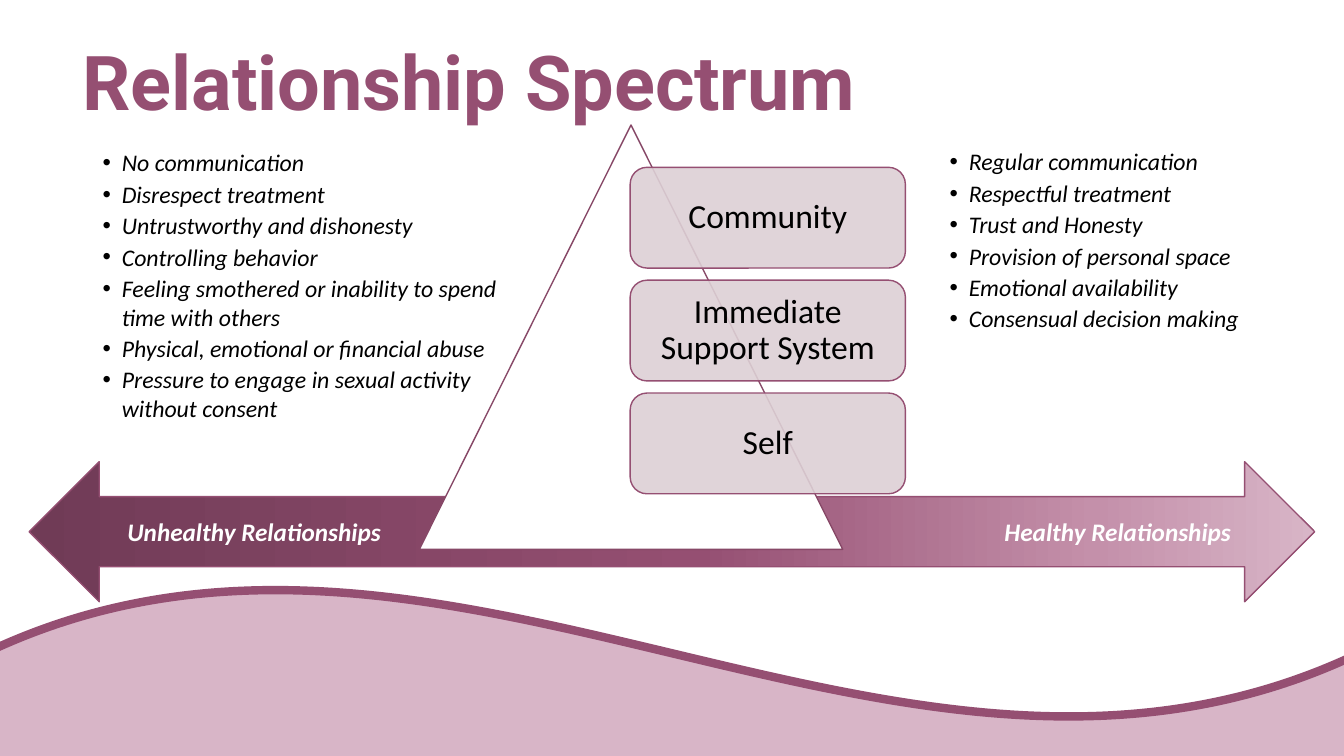
import pptx
import pptx.dml.color
import pptx.enum.shapes
import pptx.enum.text
import pptx.oxml
import pptx.oxml.ns
import pptx.util
from lxml import etree

WIDE, HIGH = pptx.util.Inches(13.33), pptx.util.Inches(7.5)
KIND = pptx.enum.shapes.MSO_SHAPE
ALIGN = pptx.enum.text.PP_ALIGN
MIDDLE = pptx.enum.text.MSO_ANCHOR.MIDDLE
Pt = pptx.util.Pt

PLUM, PINK = "954F72", "D8B5C7"
STOPS = [(0, "703B56"), (52, PLUM), (83, "C490AA"), (100, PINK)]

HEAD = dict(name="Roboto", size=Pt(54), bold=True, color=PLUM)
ENDS = dict(name="Calibri", size=Pt(18), bold=True, italic=True, color="FFFFFF")
CARD = dict(name="Calibri", size=Pt(24), color="000000")
ITEM = dict(name="Calibri", size=Pt(17), italic=True, color="000000")

BAD = ["No communication", "Disrespect treatment", "Untrustworthy and dishonesty",
       "Controlling behavior",
       "Feeling smothered or inability to spend time with others",
       "Physical, emotional or financial abuse",
       "Pressure to engage in sexual activity without consent"]
GOOD = ["Regular communication", "Respectful treatment", "Trust and Honesty",
        "Provision of personal space", "Emotional availability",
        "Consensual decision making"]
LEVELS = ["Community", "Immediate Support System", "Self"]


def place(left, top, width, height):
    """Turn percentages of the slide into lengths."""
    return [int(share * side / 100) for share, side in
            zip((left, top, width, height), (WIDE, HIGH, WIDE, HIGH))]


def tint(color, shade):
    color.rgb = pptx.dml.color.RGBColor.from_string(shade)


def node(parent, tag, **attrs):
    return etree.SubElement(parent, pptx.oxml.ns.qn(tag), attrs)


def draw(slide, kind, box, fill, line=PLUM, weight=1):
    shape = slide.shapes.add_shape(kind, *place(*box))
    shape.shadow.inherit = False
    shape.fill.solid()
    tint(shape.fill.fore_color, fill)
    tint(shape.line.color, line)
    shape.line.width = Pt(weight)
    return shape


def blend(shape, stops):
    """Fill the shape with a left-to-right gradient."""
    shape.fill.gradient()
    shape.fill.gradient_angle = 0
    ramp = shape._element.spPr.find(".//" + pptx.oxml.ns.qn("a:gsLst"))
    for old in list(ramp):
        ramp.remove(old)
    for spot, shade in stops:
        stop = node(ramp, "a:gs", pos=str(spot * 1000))
        node(stop, "a:srgbClr", val=shade)


def fade(shape, share):
    """Set the opacity of a solid fill, in percent."""
    paint = shape._element.spPr.find(
        pptx.oxml.ns.qn("a:solidFill") + "/" + pptx.oxml.ns.qn("a:srgbClr"))
    node(paint, "a:alpha", val=str(share * 1000))


def write(para, words, style):
    run = para.add_run()
    run.text = words
    for key, value in style.items():
        if key == "color":
            tint(run.font.color, value)
        else:
            setattr(run.font, key, value)


def frame(slide, box):
    text = slide.shapes.add_textbox(*place(*box)).text_frame
    text.word_wrap = True
    return text


def label(slide, box, words):
    para = frame(slide, box).paragraphs[0]
    para.alignment = ALIGN.CENTER
    write(para, words, ENDS)


def title(slide, box, words):
    text = frame(slide, box)
    text.vertical_anchor = MIDDLE
    text.paragraphs[0].line_spacing = 0.9
    write(text.paragraphs[0], words, HEAD)


def bullets(slide, box, items):
    text = frame(slide, box)
    indent = pptx.util.Inches(0.19)
    for rank, words in enumerate(items):
        para = text.add_paragraph() if rank else text.paragraphs[0]
        para.space_after = Pt(2)
        props = para._p.get_or_add_pPr()
        props.set("marL", str(indent))
        props.set("indent", str(-indent))
        node(props, "a:buFont", typeface="Arial")
        node(props, "a:buChar", char="•")
        write(para, words, ITEM)


def card(slide, box, words):
    shape = draw(slide, KIND.ROUNDED_RECTANGLE, box, "DDD0D5")
    fade(shape, 90)
    text = shape.text_frame
    text.word_wrap = True
    text.vertical_anchor = MIDDLE
    for side in ("left", "top", "right", "bottom"):
        setattr(text, "margin_" + side, pptx.util.Inches(0.1))
    para = text.paragraphs[0]
    para.alignment = ALIGN.CENTER
    para.line_spacing = 0.9
    write(para, words, CARD)


def main():
    deck = pptx.Presentation()
    deck.slide_width, deck.slide_height = WIDE, HIGH
    slide = deck.slides.add_slide(deck.slide_layouts[6])

    draw(slide, KIND.WAVE, (-1.12, 77.73, 102.25, 69.47), PINK, weight=6)
    title(slide, (5.4, 1.73, 86.28, 19.33), "Relationship Spectrum")

    arrow = draw(slide, KIND.LEFT_RIGHT_ARROW, (2.17, 61.07, 95.65, 18.53), PLUM)
    blend(arrow, STOPS)
    label(slide, (73, 67.6, 20.33, 5.33), "Healthy Relationships")
    label(slide, (6.68, 67.6, 24.46, 5.33), "Unhealthy Relationships")

    draw(slide, KIND.ISOSCELES_TRIANGLE, (31.2, 16.53, 31.5, 56.13),
         "FFFFFF", "874867")
    for row, words in enumerate(LEVELS):
        card(slide, (46.89, 22.13 + 14.93 * row, 20.48, 13.33), words)

    bullets(slide, (6.9, 18.93, 32.26, 42.4), BAD)
    bullets(slide, (69.92, 18.8, 26.71, 30.53), GOOD)
    deck.save("out.pptx")


if __name__ == "__main__":
    main()
